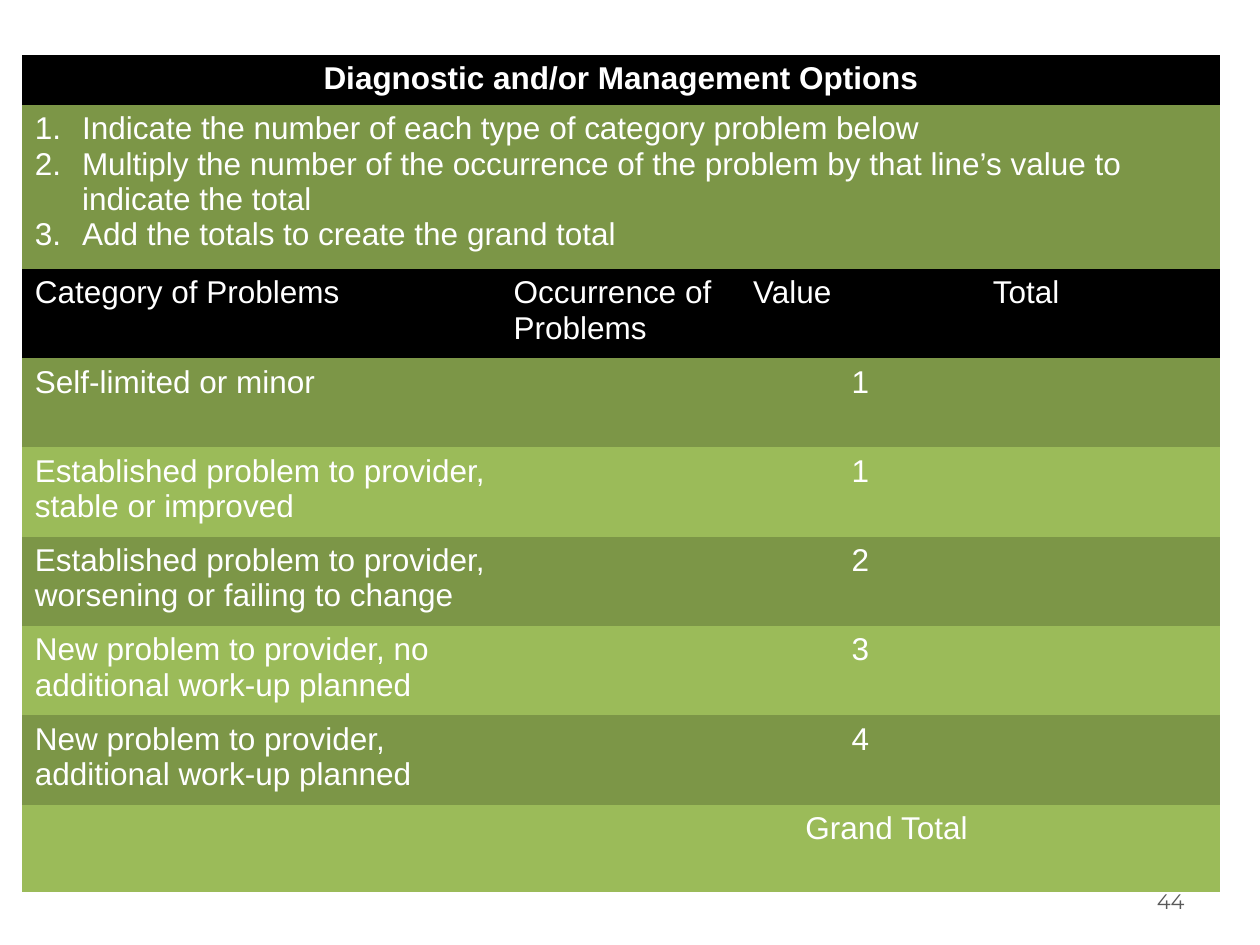
from lxml.etree import SubElement
from pptx import Presentation
from pptx.dml.color import RGBColor
from pptx.enum.text import MSO_ANCHOR, PP_ALIGN
from pptx.oxml.ns import qn
from pptx.util import Cm, Pt

COLORS = {
    "black": "000000",
    "dark_green": "7C9647",
    "light_green": "9BBB59",
    "white": "FFFFFF",
    "gray": "595959",
}
NO_STYLE_NO_GRID = "{2D5ABB26-0587-4C30-8999-92F81FD0307C}"

COLUMN_WIDTHS = [9.65, 4.83, 4.83, 4.83]
ROW_HEIGHTS = [0.96, 3.1] + [1.8] * 6 + [1.76]

INSTRUCTIONS = [
    "Indicate the number of each type of category problem below",
    "Multiply the number of the occurrence of the problem by that line’s value to indicate the total",
    "Add the totals to create the grand total",
]
HEADINGS = ["Category of Problems", "Occurrence of Problems", "Value", "Total"]
PROBLEMS = [
    ("Self-limited or minor", 1),
    ("Established problem to provider, stable or improved", 1),
    ("Established problem to provider, worsening or failing to change", 2),
    ("New problem to provider, no additional work-up planned", 3),
    ("New problem to provider, additional work-up planned", 4),
]


def format_para(para, color, size=18, font="Arial", align=PP_ALIGN.LEFT, bold=False):
    para.alignment = align
    for span in para.runs:
        span.font.name = font
        span.font.size = Pt(size)
        span.font.bold = bold
        span.font.color.rgb = RGBColor.from_string(COLORS[color])


def number_para(para):
    properties = para._p.get_or_add_pPr()
    properties.set("marL", str(Cm(0.95)))
    properties.set("indent", str(-Cm(0.95)))
    SubElement(properties, qn("a:buFont"), typeface="+mj-lt")
    SubElement(properties, qn("a:buAutoNum"), type="arabicPeriod")


def write_cell(cell, text, align=PP_ALIGN.LEFT, bold=False, numbered=False):
    cell.text_frame.text = text
    for para in cell.text_frame.paragraphs:
        if numbered:
            number_para(para)
        format_para(para, "white", align=align, bold=bold)


def fill_row(table, row, color):
    for column in range(len(COLUMN_WIDTHS)):
        fill = table.cell(row, column).fill
        fill.solid()
        fill.fore_color.rgb = RGBColor.from_string(COLORS[color])


def add_plain_table(page):
    frame = page.shapes.add_table(
        len(ROW_HEIGHTS), len(COLUMN_WIDTHS), Cm(0.45), Cm(1.1),
        Cm(sum(COLUMN_WIDTHS)), Cm(sum(ROW_HEIGHTS)))
    table = frame.table
    table.first_row = False
    table.horz_banding = False
    table._tbl.tblPr.find(qn("a:tableStyleId")).text = NO_STYLE_NO_GRID
    for column, width in zip(table.columns, COLUMN_WIDTHS):
        column.width = Cm(width)
    for row, height in zip(table.rows, ROW_HEIGHTS):
        row.height = Cm(height)
    return table


def add_page_number(page, number):
    box = page.shapes.add_textbox(Cm(18.21), Cm(17.65), Cm(5.92), Cm(1.02))
    box.text_frame.word_wrap = True
    box.text_frame.vertical_anchor = MSO_ANCHOR.MIDDLE
    box.text_frame.text = number
    format_para(box.text_frame.paragraphs[0], "gray", size=12,
                font="Montserrat", align=PP_ALIGN.RIGHT)


def main():
    deck = Presentation()
    deck.slide_width, deck.slide_height = Cm(25.4), Cm(19.05)
    page = deck.slides.add_slide(deck.slide_layouts[6])
    add_page_number(page, "44")
    table = add_plain_table(page)

    # Row colours: two black header rows, green bands elsewhere
    for row in range(len(ROW_HEIGHTS)):
        band = "dark_green" if row % 2 else "light_green"
        fill_row(table, row, "black" if row in (0, 2) else band)

    # Table heading and instructions
    for row in (0, 1):
        table.cell(row, 0).merge(table.cell(row, 3))
    write_cell(table.cell(0, 0), "Diagnostic and/or Management Options",
               align=PP_ALIGN.CENTER, bold=True)
    write_cell(table.cell(1, 0), "\n".join(INSTRUCTIONS), numbered=True)

    # Column headings and problem categories
    for column, heading in enumerate(HEADINGS):
        write_cell(table.cell(2, column), heading)
    for row, (problem, value) in enumerate(PROBLEMS, start=3):
        write_cell(table.cell(row, 0), problem)
        write_cell(table.cell(row, 2), str(value), align=PP_ALIGN.CENTER)

    # Grand total
    table.cell(8, 0).merge(table.cell(8, 2))
    write_cell(table.cell(8, 0), "Grand Total", align=PP_ALIGN.RIGHT)

    deck.save("out.pptx")


if __name__ == "__main__":
    main()
